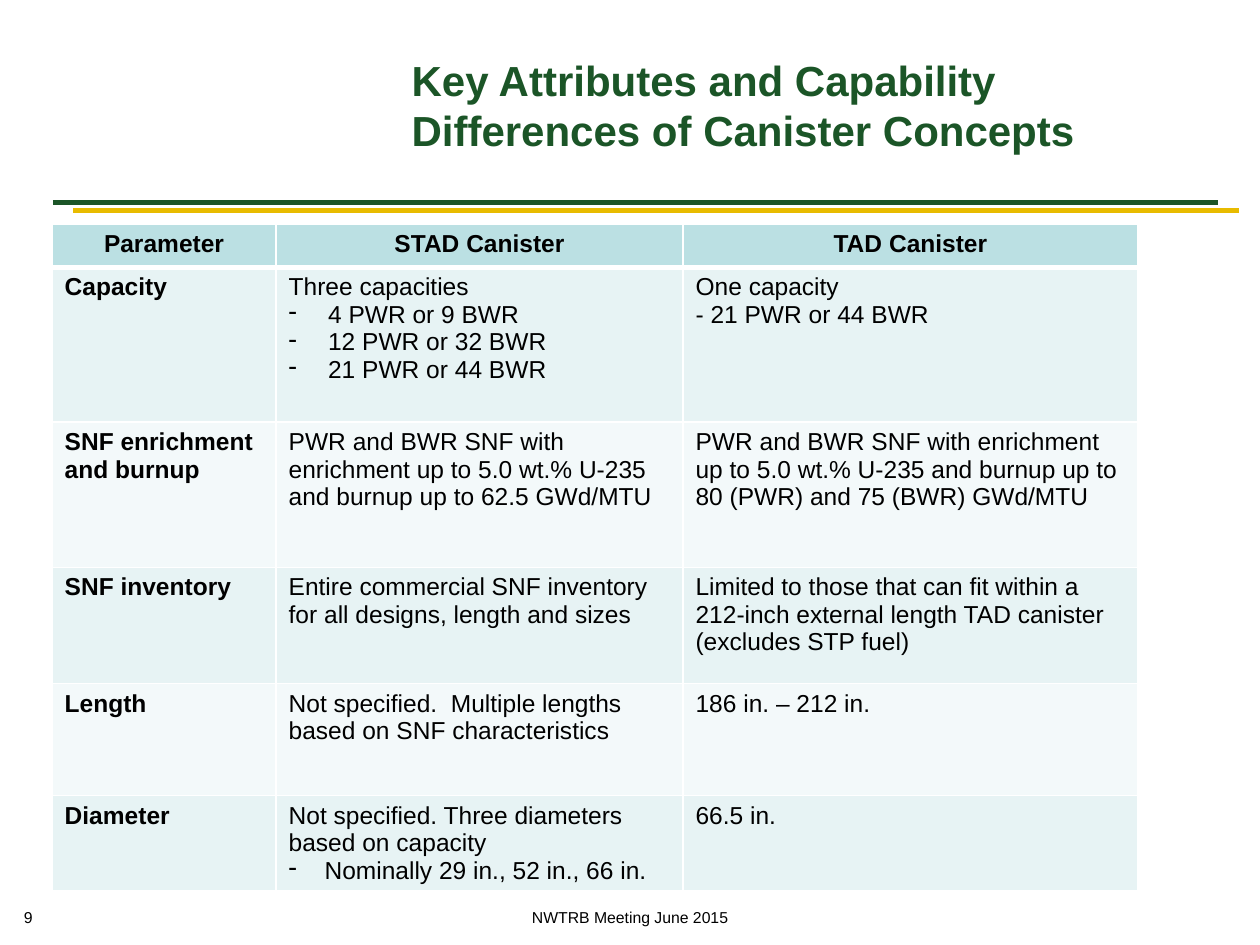
import pptx
import pptx.util
import pptx.dml.color
import pptx.enum.shapes
import pptx.enum.text
import pptx.oxml
import pptx.oxml.ns
import lxml.etree

Pt = pptx.util.Pt
RGB = pptx.dml.color.RGBColor
Align = pptx.enum.text.PP_ALIGN
Anchor = pptx.enum.text.MSO_ANCHOR
qn = pptx.oxml.ns.qn

GREEN = RGB(0x1B, 0x55, 0x27)
GOLD = RGB(0xE8, 0xBB, 0x00)
BLACK = RGB(0, 0, 0)
WHITE = RGB(255, 255, 255)
HEAD = RGB(0xBB, 0xE0, 0xE3)
BANDS = [RGB(0xF3, 0xF9, 0xFA), RGB(0xE7, 0xF3, 0xF4)]

TITLE = "Key Attributes and Capability Differences of Canister Concepts"
RULES = [(30.2, 115.9, GREEN), (41.8, 120.2, GOLD)]
RULE_W = 666
NOTES = [
    ("9", 6.5, 26, Align.LEFT),
    ("NWTRB Meeting June 2015", 228, 264, Align.CENTER),
]

COLS = [128, 232.5, 260]
HEIGHTS = [24.5, 88.5, 83, 66.5, 64, 54]
# A tuple is a dashed item: its text and its hanging indent.
ROWS = [
    [["Parameter"], ["STAD Canister"], ["TAD Canister"]],
    [["Capacity"],
     ["Three capacities", ("4 PWR or 9 BWR", 22.5),
      ("12 PWR or 32 BWR", 22.5), ("21 PWR or 44 BWR", 22.5)],
     ["One capacity", "- 21 PWR or 44 BWR"]],
    [["SNF enrichment and burnup"],
     ["PWR and BWR SNF with enrichment up to 5.0 wt.% U-235 "
      "and burnup up to 62.5 GWd/MTU"],
     ["PWR and BWR SNF with enrichment up to 5.0 wt.% U-235 "
      "and burnup up to 80 (PWR) and 75 (BWR) GWd/MTU"]],
    [["SNF inventory"],
     ["Entire commercial SNF inventory for all designs, length and sizes"],
     ["Limited to those that can fit within a 212-inch external length "
      "TAD canister (excludes STP fuel)"]],
    [["Length"],
     ["Not specified.  Multiple lengths based on SNF characteristics"],
     ["186 in. – 212 in."]],
    [["Diameter"],
     ["Not specified. Three diameters based on capacity",
      ("Nominally 29 in., 52 in., 66 in.", 20.5)],
     ["66.5 in."]],
]


def style(para, size, color=BLACK, bold=False, align=Align.LEFT):
    para.alignment = align
    for run in para.runs:
        font = run.font
        font.name, font.size, font.bold = "Arial", Pt(size), bold
        font.color.rgb = color


def dash(para, indent):
    props = para._p.get_or_add_pPr()
    props.set("marL", str(Pt(indent)))
    props.set("indent", str(-Pt(indent)))
    lxml.etree.SubElement(props, qn("a:buChar")).set("char", "-")


def edge(cell, side, width):
    line = lxml.etree.Element(qn("a:ln" + side), w=str(Pt(width)))
    fill = lxml.etree.SubElement(line, qn("a:solidFill"))
    lxml.etree.SubElement(fill, qn("a:srgbClr")).set("val", str(WHITE))
    return line


def border(cell, widths):
    props = cell._tc.get_or_add_tcPr()
    for spot, (side, width) in enumerate(widths.items()):
        props.insert(spot, edge(cell, side, width))


def fill_cell(cell, items, row, col):
    head = row == 0
    cell.fill.solid()
    cell.fill.fore_color.rgb = HEAD if head else BANDS[row % 2]
    border(cell, {"L": 1, "R": 1, "T": 3 if row == 1 else 1,
                  "B": 3 if head else 1})
    frame = cell.text_frame
    for spot, item in enumerate(items):
        para = frame.add_paragraph() if spot else frame.paragraphs[0]
        if isinstance(item, tuple):
            para.text, indent = item
            dash(para, indent)
        else:
            para.text = item
        style(para, 14, bold=head or col == 0,
              align=Align.CENTER if head else Align.LEFT)


def add_rule(slide, left, top, color):
    kind = pptx.enum.shapes.MSO_CONNECTOR.STRAIGHT
    rule = slide.shapes.add_connector(
        kind, Pt(left), Pt(top), Pt(left + RULE_W), Pt(top))
    rule.line.color.rgb = color
    rule.line.width = Pt(3)
    lxml.etree.SubElement(rule._element.spPr, qn("a:effectLst"))


def add_note(slide, text, left, width, align):
    box = slide.shapes.add_textbox(Pt(left), Pt(515), Pt(width), Pt(18))
    box.text_frame.word_wrap = True
    box.text_frame.text = text
    style(box.text_frame.paragraphs[0], 9, align=align)


def add_title(slide):
    title = slide.shapes.title
    title.left, title.top = Pt(228), Pt(12)
    title.width, title.height = Pt(456), Pt(96)
    frame = title.text_frame
    frame.text = TITLE
    frame.word_wrap = True
    frame.vertical_anchor = Anchor.MIDDLE
    style(frame.paragraphs[0], 24, GREEN, True)


def add_grid(slide):
    grid = slide.shapes.add_table(
        len(ROWS), len(COLS), Pt(29.8), Pt(128.2),
        Pt(sum(COLS)), Pt(sum(HEIGHTS))).table
    for col, width in zip(grid.columns, COLS):
        col.width = Pt(width)
    for row, height in zip(grid.rows, HEIGHTS):
        row.height = Pt(height)
    for row, cells in enumerate(ROWS):
        for col, items in enumerate(cells):
            fill_cell(grid.cell(row, col), items, row, col)


def main():
    deck = pptx.Presentation()
    deck.slide_width, deck.slide_height = Pt(720), Pt(540)
    slide = deck.slides.add_slide(deck.slide_layouts[5])
    for rule in RULES:
        add_rule(slide, *rule)
    add_title(slide)
    add_grid(slide)
    for note in NOTES:
        add_note(slide, *note)
    deck.save("out.pptx")


if __name__ == "__main__":
    main()
